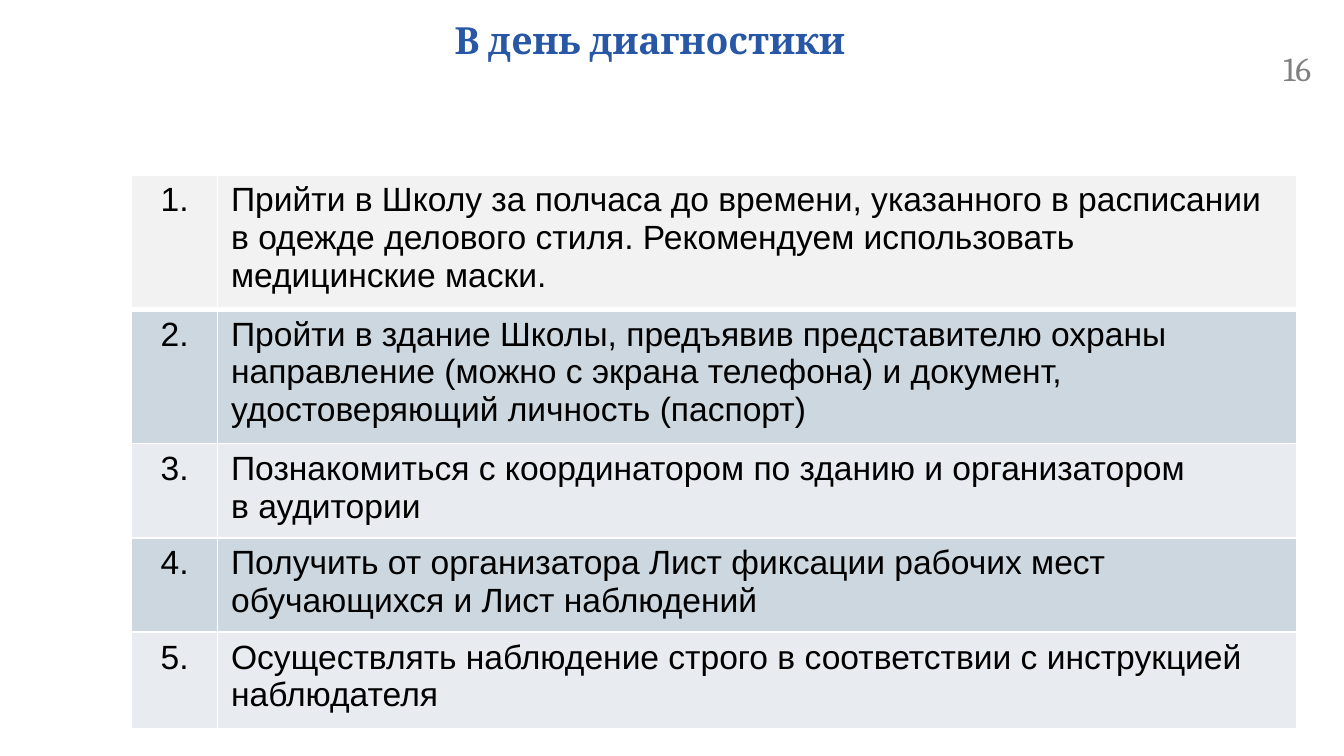
from dataclasses import dataclass
from typing import Optional

from lxml.etree import SubElement
from pptx import Presentation
from pptx.dml.color import RGBColor as Rgb
from pptx.enum.text import PP_ALIGN as Align
from pptx.oxml.ns import qn
from pptx.util import Inches, Pt


@dataclass
class Label:
    text: str
    left: float
    top: float
    width: float
    height: float
    size: int
    color: str
    bold: bool = False
    align: Align = Align.LEFT
    space: Optional[float] = None


@dataclass
class Step:
    text: str
    fill: str
    height: float = 0.61
    rule: int = 1  # bottom border, points


TITLE = Label("В день диагностики", 2.62, 0.14, 4.43, 0.63, 20, "2857A5",
              True, Align.CENTER, 0.8)
NUMBER = Label("16", 9.45, 0.31, 0.55, 0.3, 18, "808080")

PALE, DARK, LIGHT = "F2F2F2", "CDD7DF", "E8ECF0"
STEPS = [
    Step("Прийти в Школу за полчаса до времени, указанного в расписании "
         "в одежде делового стиля. Рекомендуем использовать "
         "медицинские маски.", PALE, rule=3),
    Step("Пройти в здание Школы, предъявив представителю охраны "
         "направление (можно с экрана телефона) и документ, "
         "удостоверяющий личность (паспорт)", DARK),
    Step("Познакомиться с координатором по зданию и организатором\n"
         "в аудитории", LIGHT),
    Step("Получить от организатора Лист фиксации рабочих мест "
         "обучающихся и Лист наблюдений", DARK),
    Step("Осуществлять наблюдение строго в соответствии с инструкцией "
         "наблюдателя", LIGHT, height=0.72),
]
COLS = [0.64, 8.03]


def paint(target, color: str) -> None:
    target.rgb = Rgb.from_string(color)


def style(frame, face: str, size: int, color: str, align: Align,
          bold: bool = False, space: Optional[float] = None) -> None:
    for para in frame.paragraphs:
        para.alignment = align
        if space:
            para.line_spacing = space
        font = para.font
        font.name, font.size, font.bold = face, Pt(size), bold
        paint(font.color, color)


def add_label(slide, label: Label) -> None:
    box = slide.shapes.add_textbox(Inches(label.left), Inches(label.top),
                                   Inches(label.width), Inches(label.height))
    frame = box.text_frame
    frame.word_wrap = True
    frame.text = label.text
    style(frame, "Cambria", label.size, label.color, label.align,
          label.bold, label.space)


def add_edges(cell, widths: dict[str, int]) -> None:
    props = cell._tc.get_or_add_tcPr()
    for spot, (side, width) in enumerate(widths.items()):
        line = SubElement(props, qn(f"a:ln{side}"), w=str(Pt(width)))
        fill = SubElement(line, qn("a:solidFill"))
        SubElement(fill, qn("a:srgbClr"), val="FFFFFF")
        props.insert(spot, line)  # borders come before the fill


def fill_cell(cell, text: str, align: Align, step: Step, above: int) -> None:
    cell.text = text
    style(cell.text_frame, "Arial", 18, "000000", align)
    cell.fill.solid()
    paint(cell.fill.fore_color, step.fill)
    add_edges(cell, {"L": 1, "R": 1, "T": above, "B": step.rule})


def add_steps(slide, steps: list[Step]) -> None:
    frame = slide.shapes.add_table(len(steps), len(COLS), Inches(0.98),
                                   Inches(1.3), Inches(8.66), Inches(4.12))
    table = frame.table
    for col, width in zip(table.columns, COLS):
        col.width = Inches(width)
    above = 1
    for row, step in enumerate(steps):
        table.rows[row].height = Inches(step.height)
        fill_cell(table.cell(row, 0), f"{row + 1}.", Align.CENTER, step, above)
        fill_cell(table.cell(row, 1), step.text, Align.LEFT, step, above)
        above = step.rule
    frame.height = Inches(4.12)


def main() -> None:
    deck = Presentation()
    deck.slide_width = Inches(10)
    deck.slide_height = deck.slide_width * 9 // 16
    slide = deck.slides.add_slide(deck.slide_layouts[6])

    # Heading, table of steps, page number
    add_label(slide, TITLE)
    add_steps(slide, STEPS)
    add_label(slide, NUMBER)
    deck.save("out.pptx")


if __name__ == "__main__":
    main()
